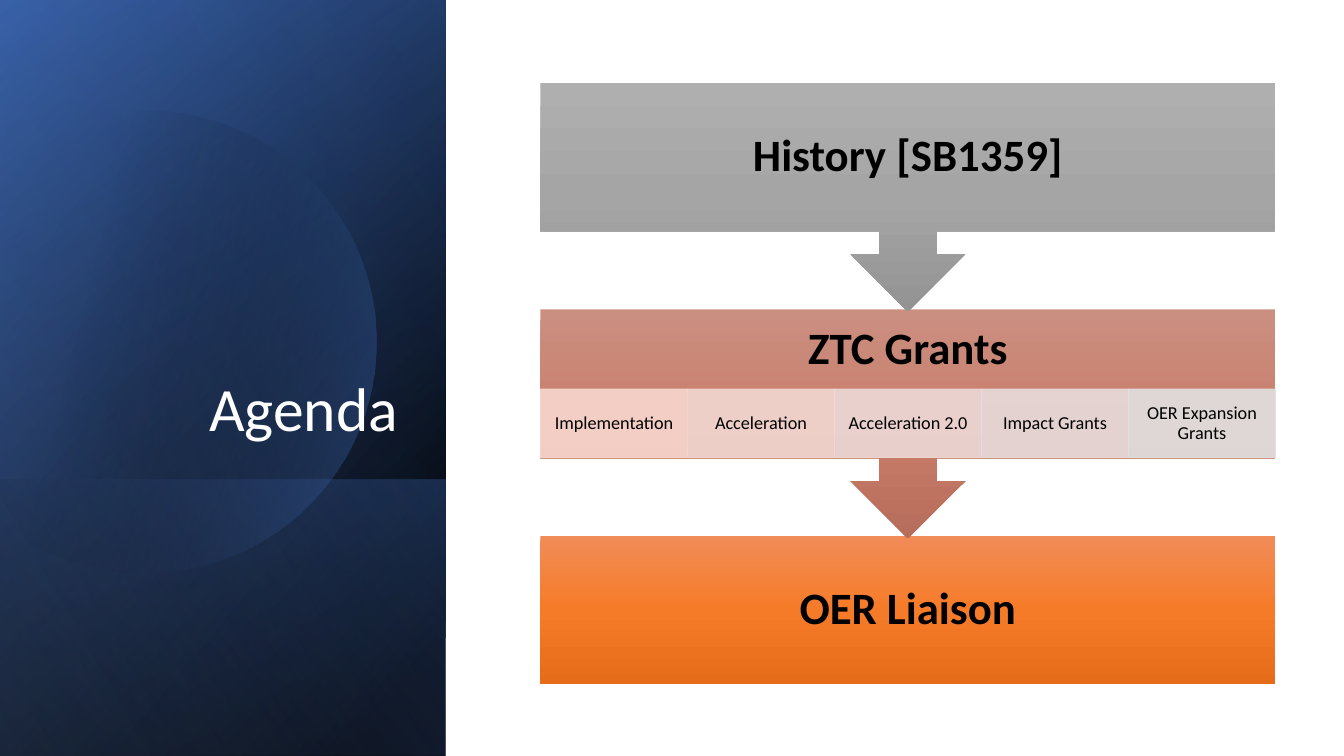
"""Build the agenda slide: a dark title panel beside a three-step flow."""
from math import acos, cos, sin

from lxml.etree import SubElement
from pptx import Presentation
from pptx.dml.color import RGBColor
from pptx.enum.shapes import MSO_SHAPE as Shape
from pptx.enum.text import MSO_ANCHOR as Anchor, PP_ALIGN as Align
from pptx.oxml.ns import qn
from pptx.util import Inches, Pt

BLACK = RGBColor(0x00, 0x00, 0x00)
WHITE = RGBColor(0xFF, 0xFF, 0xFF)
NAVY = RGBColor(0x2F, 0x55, 0x97)
BLUE = RGBColor(0x44, 0x72, 0xC4)
PALE_BLUE = RGBColor(0x8F, 0xAA, 0xDC)
GRAYS = [RGBColor(0xAF, 0xAF, 0xAF), RGBColor(0xA5, 0xA5, 0xA5), RGBColor(0x93, 0x93, 0x93)]
REDS = [RGBColor(0xCB, 0x8F, 0x81), RGBColor(0xC9, 0x7E, 0x6B), RGBColor(0xB7, 0x6D, 0x5B)]
ORANGES = [RGBColor(0xF1, 0x8C, 0x57), RGBColor(0xF6, 0x7B, 0x28), RGBColor(0xE5, 0x6C, 0x19)]
GRANTS = [
    ("Implementation", RGBColor(0xF8, 0xD7, 0xCE)),
    ("Acceleration", RGBColor(0xF2, 0xD8, 0xD2)),
    ("Acceleration 2.0", RGBColor(0xED, 0xD9, 0xD7)),
    ("Impact Grants", RGBColor(0xE7, 0xDC, 0xDC)),
    ("OER Expansion Grants", RGBColor(0xE1, 0xE1, 0xE1)),
]
PANEL = (-1.54, 1.54, 7.5, 4.42)
PANEL_FOOT = (0.84, 3.92, 2.74, 4.42)
FLOW_LEFT, FLOW_TOP, FLOW_WIDTH = 5.36, 0.82, 7.29
STEP_GAP, STEP_HEIGHT, CALLOUT_HEIGHT = 2.25, 1.47, 2.27
GRANT_TOP, GRANT_WIDTH, GRANT_HEIGHT = 3.86, FLOW_WIDTH / len(GRANTS), 0.68


class AgendaSlide:
    """Hold the font and the current slide, and draw its elements."""

    font = "Calibri"

    def __init__(self, presentation):
        self.slide = presentation.slides.add_slide(presentation.slide_layouts[5])
        self.shapes = self.slide.shapes

    def set_alpha(self, fill, percent):
        """Make a solid fill partly transparent."""
        color = fill._xPr.find(qn("a:solidFill"))[0]
        SubElement(color, qn("a:alpha"), val=str(percent * 1000))

    def set_gradient(self, shape, stops, angle, turns=True):
        """Fill a shape with (position, color, opacity) stops."""
        shape.shadow.inherit = False
        shape.line.fill.background()
        shape.fill.solid()
        properties = shape._element.spPr
        solid = properties.find(qn("a:solidFill"))
        gradient = properties.makeelement(qn("a:gradFill"), {"rotWithShape": str(int(turns))})
        stop_list = SubElement(gradient, qn("a:gsLst"))
        for position, color, opacity in stops:
            stop = SubElement(stop_list, qn("a:gs"), pos=str(position * 1000))
            color_element = SubElement(stop, qn("a:srgbClr"), val=str(color))
            if opacity < 100:
                SubElement(color_element, qn("a:alpha"), val=str(opacity * 1000))
        SubElement(gradient, qn("a:lin"), ang=str(angle * 60000), scaled="0")
        properties.replace(solid, gradient)

    def set_text(self, shape, text, size, color=BLACK, bold=False, align=Align.CENTER,
                 anchor=Anchor.MIDDLE, margins=(0.1, 0.05)):
        """Put one formatted paragraph into a shape."""
        frame = shape.text_frame
        frame.text = text
        frame.word_wrap = True
        frame.vertical_anchor = anchor
        frame.margin_left = frame.margin_right = Inches(margins[0])
        frame.margin_top = frame.margin_bottom = Inches(margins[1])
        paragraph = frame.paragraphs[0]
        paragraph.alignment = align
        paragraph.line_spacing = 0.9
        font = paragraph.font
        font.name, font.size, font.bold = self.font, Pt(size), bold
        font.color.rgb = color

    def add_shape(self, kind, box):
        """Add a preset shape with its box in inches."""
        return self.shapes.add_shape(kind, *map(Inches, box))

    def add_panel(self, box, stops, angle):
        """Add a mirrored quarter-turned gradient rectangle."""
        panel = self.add_shape(Shape.RECTANGLE, box)
        panel.rotation = 90
        panel._element.spPr.xfrm.set("flipH", "1")
        self.set_gradient(panel, stops, angle)

    def add_disc(self, center_x, center_y, radius, cut_x, stops, angle):
        """Add a disc cut straight along its left side."""
        sweep = acos((cut_x - center_x) / radius)
        steps = 120
        angles = [sweep * (2 * step / steps - 1) for step in range(steps + 1)]
        points = [(Inches(center_x + radius * cos(turn)), Inches(center_y + radius * sin(turn)))
                  for turn in angles]
        builder = self.shapes.build_freeform(*points[0])
        builder.add_line_segments(points[1:], close=True)
        self.set_gradient(builder.convert_to_shape(), stops, angle)

    def add_title(self, text, box):
        """Place the title above the backdrop."""
        title = self.shapes.title
        title.left, title.top, title.width, title.height = map(Inches, box)
        self.shapes._spTree.append(title._element)
        self.set_text(title, text, 44, WHITE, align=Align.RIGHT, anchor=Anchor.BOTTOM)

    def add_step(self, text, top, colors, text_height=STEP_HEIGHT, arrow=True):
        """Add a flow step, with a down arrow unless it is the last."""
        box = (FLOW_LEFT, top, FLOW_WIDTH, CALLOUT_HEIGHT if arrow else STEP_HEIGHT)
        step = self.add_shape(Shape.UP_ARROW_CALLOUT if arrow else Shape.RECTANGLE, box)
        stops = [(position, color, 100) for position, color in zip((0, 50, 100), colors)]
        self.set_gradient(step, stops, 90, turns=False)
        label = step
        if arrow:
            step.rotation = 180
            label = self.shapes.add_textbox(
                *map(Inches, (FLOW_LEFT, top, FLOW_WIDTH, text_height)))
        self.set_text(label, text, 32, bold=True, margins=(0.25, 0.25))

    def add_grant(self, text, left, color):
        """Add one pale grant cell."""
        cell = self.add_shape(Shape.RECTANGLE, (left, GRANT_TOP, GRANT_WIDTH, GRANT_HEIGHT))
        cell.shadow.inherit = False
        cell.line.width = Pt(0.5)
        for fill in (cell.fill, cell.line.fill):
            fill.solid()
            fill.fore_color.rgb = color
            self.set_alpha(fill, 90)
        self.set_text(cell, text, 13, margins=(0.1, 0.02))


def main():
    presentation = Presentation()
    presentation.slide_width, presentation.slide_height = Inches(13.33), Inches(7.5)
    agenda = AgendaSlide(presentation)

    agenda.add_panel(PANEL, [(8, BLACK, 100), (100, NAVY, 100)], 50)
    agenda.add_panel(PANEL, [(0, BLACK, 0), (99, BLUE, 46)], 30)
    agenda.add_panel(PANEL_FOOT, [(2, BLUE, 29), (100, BLACK, 30)], 130)
    agenda.add_disc(1.44, 3.39, 2.29, -0.15, [(29, BLACK, 0), (100, BLUE, 43)], 14)
    agenda.add_panel(PANEL, [(0, BLACK, 0), (99, PALE_BLUE, 11)], 120)
    agenda.add_title("Agenda", (0.64, 1.84, 3.41, 2.62))

    agenda.add_step("OER Liaison", FLOW_TOP + 2 * STEP_GAP, ORANGES, arrow=False)
    agenda.add_step("ZTC Grants", FLOW_TOP + STEP_GAP, REDS, text_height=0.8)
    for index, (text, color) in enumerate(GRANTS):
        agenda.add_grant(text, FLOW_LEFT + index * GRANT_WIDTH, color)
    agenda.add_step("History [SB1359]", FLOW_TOP, GRAYS)

    presentation.save("out.pptx")


if __name__ == "__main__":
    main()
